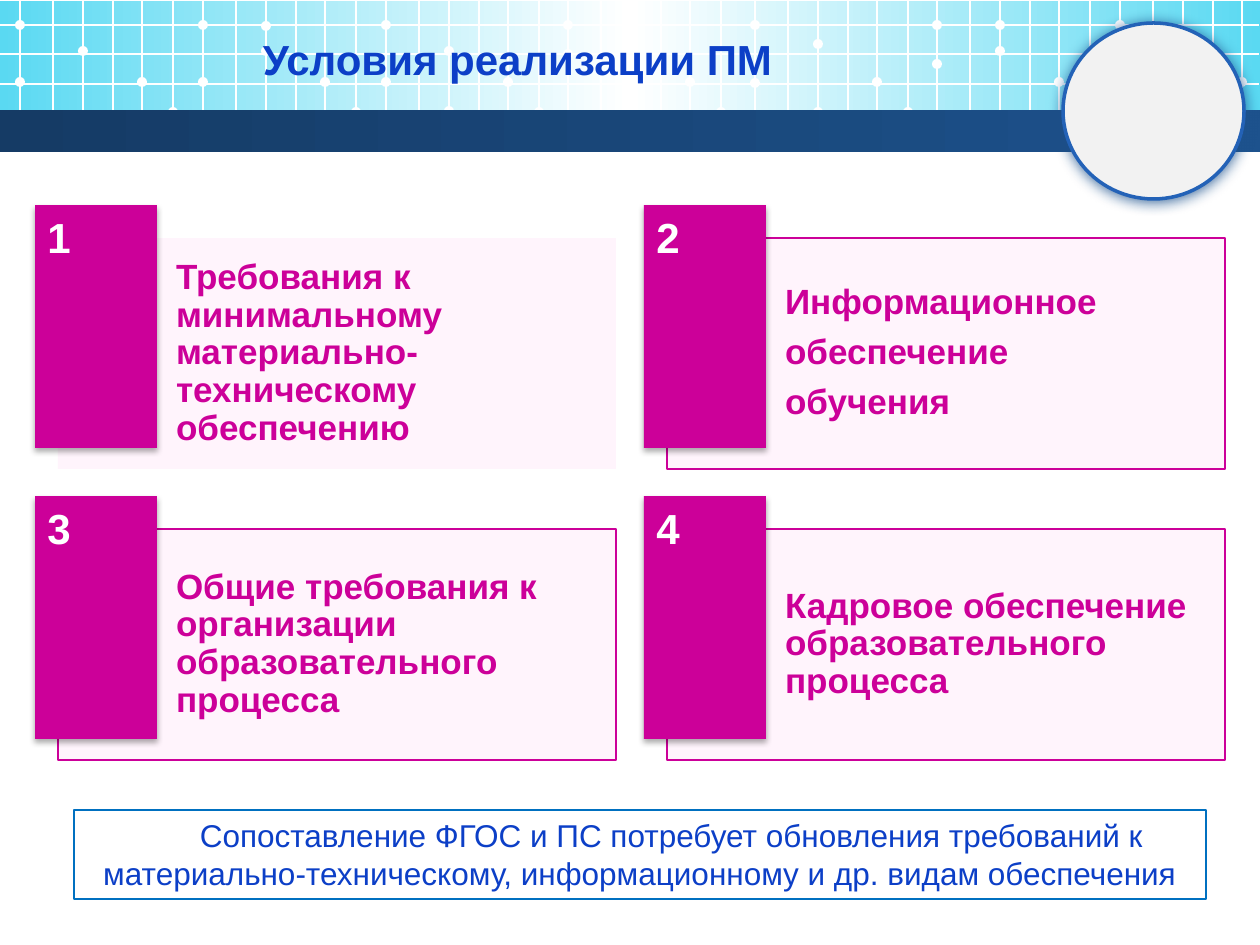
from dataclasses import dataclass

from lxml import etree
from pptx import Presentation
from pptx.dml.color import RGBColor
from pptx.enum.shapes import MSO_CONNECTOR, MSO_SHAPE
from pptx.enum.text import MSO_ANCHOR, MSO_AUTO_SIZE, PP_ALIGN
from pptx.oxml.ns import qn
from pptx.shapes.base import BaseShape
from pptx.slide import Slide
from pptx.text.text import TextFrame
from pptx.util import Pt

EMU_PER_PX = 914400 / 126
RECTANGLE, OVAL = MSO_SHAPE.RECTANGLE, MSO_SHAPE.OVAL
STRAIGHT = MSO_CONNECTOR.STRAIGHT
TOP, MIDDLE = MSO_ANCHOR.TOP, MSO_ANCHOR.MIDDLE
LEFT, CENTER = PP_ALIGN.LEFT, PP_ALIGN.CENTER
FIT_SHAPE = MSO_AUTO_SIZE.SHAPE_TO_FIT_TEXT


@dataclass(frozen=True)
class Theme:
    font: str = "Arial"
    white: str = "FFFFFF"
    blue: str = "0C3FC7"
    note_line: str = "0070C0"
    magenta: str = "CC0099"
    pink: str = "FFE5F8"
    disc: str = "F2F2F2"
    disc_line: str = "2362B7"
    sky: tuple[str, ...] = ("5AD9F2", "FFFFFF", "5AD9F2")
    navy: tuple[str, ...] = ("153B65", "1D528D")
    heading_size: float = 24
    card_size: float = 20
    note_size: float = 18
    hairline: float = 0.75


@dataclass(frozen=True)
class Area:
    left: int
    top: int
    width: int
    height: int


@dataclass(frozen=True)
class Shadow:
    color: str
    alpha: int
    blur: float
    distance: float


@dataclass(frozen=True)
class GridTile:
    left: int
    start_dot: int
    middle_dots: tuple[int, int]


@dataclass(frozen=True)
class Card:
    paragraphs: tuple[str, ...]
    outlined: bool = True


THEME = Theme()
DISC_SHADOW = Shadow("1D528D", 80, 8, 1)
BADGE_SHADOW = Shadow("000000", 32, 3.5, 2.2)
COLUMN_OFFSETS = (0, 33, 63, 93, 122, 153)
ROW_LINES = (25, 54, 84, 112)
GRID_TILES = (
    GridTile(20, 82, (51, 115)),
    GridTile(203, 82, (51, 26)),
    GridTile(386, 82, (51, 111)),
    GridTile(568, 54, (53, 25)),
    GridTile(755, 83, (44, 112)),
    GridTile(937, 64, (51, 25)),
    GridTile(1120, 82, (53, 111)),
)
CARDS = (
    Card(("Требования к минимальному материально-техническому обеспечению",), False),
    Card(("Информационное", "обеспечение", "обучения")),
    Card(("Общие требования к организации образовательного процесса",)),
    Card(("Кадровое обеспечение образовательного процесса",)),
)
NOTE = (
    "Сопоставление ФГОС и ПС потребует обновления требований к "
    "материально-техническому, информационному и др. видам обеспечения"
)


def px(length: int) -> int:
    return round(length * EMU_PER_PX)


def bounds(area: Area) -> tuple[int, int, int, int]:
    return px(area.left), px(area.top), px(area.width), px(area.height)


def add_box(page: Slide, area: Area, fill: str, line: str | None = None,
            width: float = THEME.hairline, kind: MSO_SHAPE = RECTANGLE) -> BaseShape:
    box = page.shapes.add_shape(kind, *bounds(area))
    box.shadow.inherit = False
    box.fill.solid()
    box.fill.fore_color.rgb = RGBColor.from_string(fill)
    if line:
        box.line.color.rgb = RGBColor.from_string(line)
        box.line.width = Pt(width)
    else:
        box.line.fill.background()
    return box


def add_color(parent: etree._Element, color: str, alpha: int = 100) -> None:
    node = etree.SubElement(parent, qn("a:srgbClr"), val=color)
    if alpha < 100:
        etree.SubElement(node, qn("a:alpha"), val=str(alpha * 1000))


def add_gradient_box(page: Slide, area: Area, colors: tuple[str, ...]) -> None:
    box = add_box(page, area, colors[0])
    box.fill.gradient()
    box.fill.gradient_angle = 0
    stops = box._element.spPr.find(".//" + qn("a:gsLst"))
    for stop in list(stops):
        stops.remove(stop)
    for index, color in enumerate(colors):
        position = index * 100000 // (len(colors) - 1)
        add_color(etree.SubElement(stops, qn("a:gs"), pos=str(position)), color)


def add_shadow(box: BaseShape, shadow: Shadow) -> None:
    effects = box._element.spPr.find(qn("a:effectLst"))
    node = etree.SubElement(
        effects, qn("a:outerShdw"), blurRad=str(Pt(shadow.blur)),
        dist=str(Pt(shadow.distance)), dir="5400000", algn="ctr", rotWithShape="0")
    add_color(node, shadow.color, shadow.alpha)


def add_grid_line(page: Slide, start: tuple[int, int], end: tuple[int, int]) -> None:
    line = page.shapes.add_connector(STRAIGHT, *map(px, start + end))
    line.line.color.rgb = RGBColor.from_string(THEME.white)
    line.line.width = Pt(THEME.hairline)
    etree.SubElement(line._element.spPr, qn("a:effectLst"))


def write(frame: TextFrame, paragraphs: tuple[str, ...], size: float, color: str,
          bold: bool = True, align: PP_ALIGN = LEFT, anchor: MSO_ANCHOR = MIDDLE) -> None:
    frame.word_wrap = True
    frame.vertical_anchor = anchor
    for index, text in enumerate(paragraphs):
        para = frame.add_paragraph() if index else frame.paragraphs[0]
        para.text = text
        para.alignment = align
        para.font.name = THEME.font
        para.font.size = Pt(size)
        para.font.bold = bold
        para.font.color.rgb = RGBColor.from_string(color)


def draw_header(page: Slide) -> None:
    add_gradient_box(page, Area(0, 1, 1260, 129), THEME.sky)
    for tile in GRID_TILES:
        columns = [tile.left + offset for offset in COLUMN_OFFSETS
                   if tile.left + offset < 1260]
        dots = list(zip((0, 0, 2, 2, 4, 5),
                        (tile.start_dot, 25, *tile.middle_dots, 82, 112)))
        for column, center in dots:
            if column < len(columns):
                area = Area(columns[column] - 5, center - 5, 10, 10)
                add_box(page, area, THEME.white, kind=OVAL)
        for left in columns:
            add_grid_line(page, (left, 0), (left, 139))
    for top in ROW_LINES:
        add_grid_line(page, (0, top), (1259, top))
    add_gradient_box(page, Area(0, 110, 1260, 42), THEME.navy)
    disc = add_box(page, Area(1063, 23, 181, 176), THEME.disc, THEME.disc_line, 2, OVAL)
    add_shadow(disc, DISC_SHADOW)
    title = page.shapes.add_textbox(*bounds(Area(49, 16, 937, 85)))
    write(title.text_frame, ("Условия реализации ПМ",), THEME.heading_size,
          THEME.blue, align=CENTER)


def draw_card(page: Slide, card: Card, index: int) -> None:
    row, column = divmod(index, 2)
    left, top = 35 + 609 * column, 205 + 291 * row
    panel = add_box(page, Area(left + 23, top + 33, 558, 231), THEME.pink,
                    THEME.magenta if card.outlined else None)
    color = panel._element.spPr.find(qn("a:solidFill")).find(qn("a:srgbClr"))
    etree.SubElement(color, qn("a:alpha"), val="40000")
    frame = panel.text_frame
    frame.margin_left = px(118)
    frame.margin_top = frame.margin_right = frame.margin_bottom = px(9)
    write(frame, card.paragraphs, THEME.card_size, THEME.magenta)
    for para in frame.paragraphs:
        para.line_spacing = 0.9
        para.space_after = Pt(7)
    badge = add_box(page, Area(left, top, 122, 243), THEME.magenta)
    add_shadow(badge, BADGE_SHADOW)
    write(badge.text_frame, (str(index + 1),), THEME.heading_size, THEME.white, anchor=TOP)


def draw_note(page: Slide) -> None:
    box = add_box(page, Area(74, 810, 1132, 89), THEME.white, THEME.note_line)
    frame = box.text_frame
    write(frame, (NOTE,), THEME.note_size, THEME.blue, False, CENTER, TOP)
    frame.auto_size = FIT_SHAPE
    frame.paragraphs[0]._p.get_or_add_pPr().set("indent", str(px(63)))


def main() -> None:
    deck = Presentation()
    deck.slide_width, deck.slide_height = px(1260), px(945)
    page = deck.slides.add_slide(deck.slide_layouts[6])
    draw_header(page)
    draw_note(page)
    for index, card in enumerate(CARDS):
        draw_card(page, card, index)
    deck.save("out.pptx")


if __name__ == "__main__":
    main()
